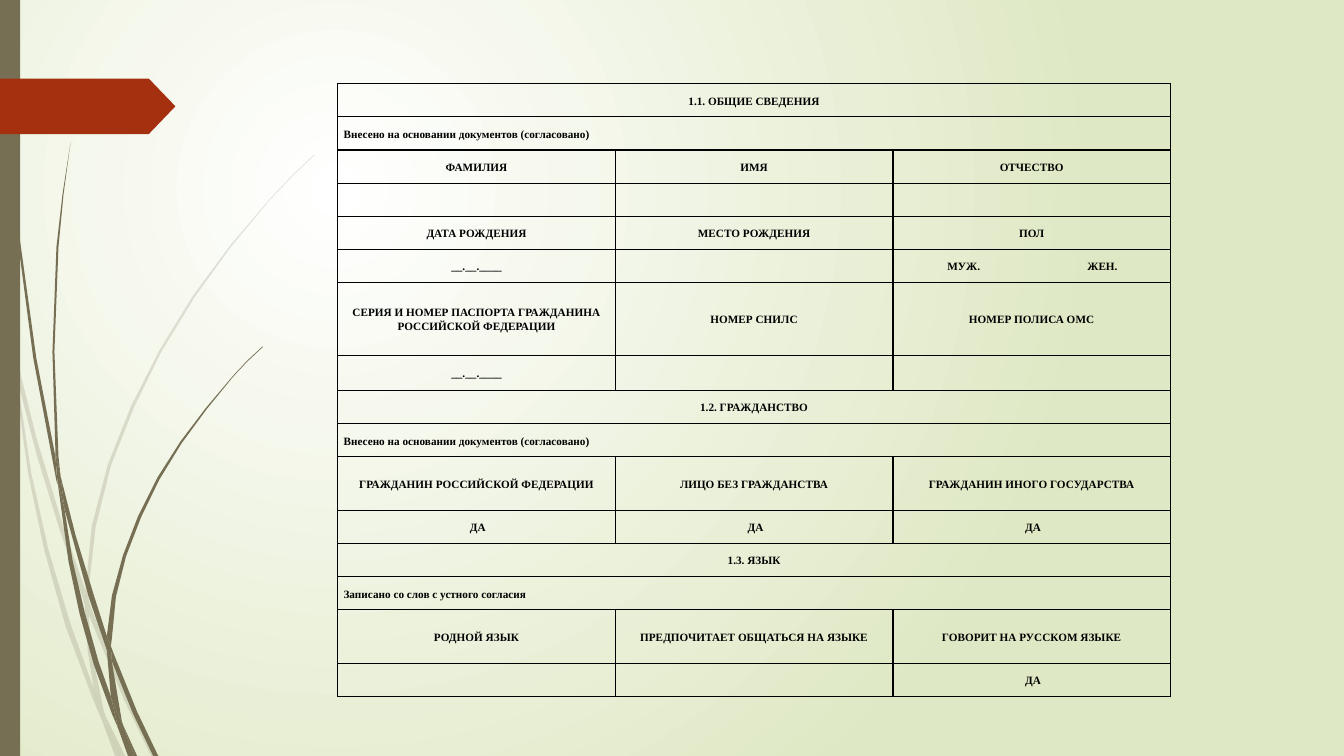
import pptx
import pptx.util
import pptx.dml.color
import pptx.enum.shapes
import pptx.enum.text
import pptx.oxml
import pptx.oxml.ns
import lxml.etree

COLORS = {"stem": "766F54", "arrow": "A53010", "ink": "000000",
          "glow": "FFFFFF", "edge": "DFE8C4"}
FONT, SIZE = "Times New Roman", 8
W, H = 13.33, 7.5
inch = pptx.util.Inches
qn = pptx.oxml.ns.qn

prs = pptx.Presentation()
prs.slide_width, prs.slide_height = inch(W), inch(H)
slide = prs.slides.add_slide(prs.slide_layouts[6])

fill = slide.background.fill
fill.gradient()
for stop, name in zip(fill.gradient_stops, ("glow", "edge")):
    stop.color.rgb = pptx.dml.color.RGBColor.from_string(COLORS[name])
    stop.position = 0 if name == "glow" else 1
grad = fill._fill._gradFill
for lin in grad.findall(qn("a:lin")):
    grad.remove(lin)
circle = lxml.etree.SubElement(grad, qn("a:path"), path="circle")
lxml.etree.SubElement(circle, qn("a:fillToRect"),
                      l="50000", t="50000", r="100000", b="100000")


def paint(sp, name):
    sp.shadow.inherit = False
    sp.fill.solid()
    sp.fill.fore_color.rgb = pptx.dml.color.RGBColor.from_string(COLORS[name])
    sp.line.fill.background()


pale_leaves = [
    [(.11, 3.5), (.09, 3.22), (0, 2.82), (0, 2.99), (.1, 3.44)],
    [(.58, 5.22), (.84, 5.99), (.85, 5.86), (.62, 5.2), (.36, 4.34), (.14, 3.45), (.17, 3.76), (.36, 4.5)],
    [(.92, 6.07), (.88, 5.96), (.88, 6.1), (1.23, 6.94), (1.5, H), (1.55, H), (1.27, 6.92)],
    [(1.19, H), (1.24, H), (1.05, 7.11)],
    [(.93, 6.83), (.7, 6.19), (.48, 5.45), (.31, 4.69), (.17, 3.76), (.11, 3.5), (.28, 4.7),
     (.44, 5.46), (.65, 6.21), (.92, 6.93), (1.01, 7.14), (.99, 7.07)],
    [(.84, 5.99), (.87, 6.46), (.93, 6.83), (.96, 6.92), (1.05, 7.11), (1.03, 7.06),
     (.91, 6.46), (.88, 6.1), (.88, 6.08)],
    [(.88, 5.84), (.95, 5.22), (1.1, 4.62), (1.33, 4.04), (1.6, 3.49), (1.93, 2.95), (2.29, 2.45),
     (2.68, 1.98), (2.9, 1.75), (3.12, 1.54), (3.12, 1.53), (2.89, 1.75), (2.68, 1.97), (2.28, 2.44),
     (1.91, 2.94), (1.58, 3.48), (1.3, 4.03), (1.07, 4.61), (.91, 5.22), (.85, 5.84), (.85, 5.86), (.88, 5.96)],
    [(1.01, 7.14), (1.14, H), (1.19, H)],
    [(.88, 6.08), (.88, 6.1), (.88, 5.96), (.85, 5.86), (.84, 5.99)],
    [(.96, 6.92), (.93, 6.83), (.99, 7.07), (1.01, 7.14), (1.19, H), (1.05, 7.11)],
]
dark_leaves = [
    [(.07, 1.1), (.17, 2.33), (.33, 3.55), (.56, 4.77), (.57, 4.81), (.55, 4.53), (.36, 3.55),
     (.19, 2.32), (.08, 1.09), (.05, .48), (.04, 0), (.03, 0), (.04, .48)],
    [(.88, 5.92), (1.06, 6.45), (1.06, 6.31), (.93, 5.9), (.75, 5.31), (.6, 4.72), (.64, 5.05)],
    [(1.13, 6.49), (1.1, 6.41), (1.11, 6.56), (1.32, 7.08), (1.52, H), (1.57, H), (1.36, 7.06)],
    [(1.1, 6.91), (.98, 6.57), (.84, 6.07), (.72, 5.56), (.64, 5.05), (.57, 4.77), (.68, 5.57),
     (.79, 6.09), (.93, 6.59), (1.11, 7.08), (1.17, 7.22), (1.16, 7.17)],
    [(.6, 4.72), (.58, 4.53), (.54, 3.49), (.58, 2.45), (.63, 1.93), (.7, 1.41),
     (.62, 1.93), (.56, 2.45), (.52, 3.49), (.55, 4.49)],
    [(1.33, H), (1.36, H), (1.22, 7.19)],
    [(.57, 4.77), (.64, 5.05), (.6, 4.72), (.55, 4.49), (.55, 4.53)],
    [(1.11, 6.33), (1.15, 5.92), (1.25, 5.52), (1.4, 5.13), (1.58, 4.76), (1.8, 4.4), (2.05, 4.06),
     (2.31, 3.74), (2.45, 3.59), (2.61, 3.44), (2.6, 3.44), (2.45, 3.58), (2.31, 3.73), (2.04, 4.05),
     (1.79, 4.38), (1.56, 4.74), (1.37, 5.12), (1.22, 5.51), (1.11, 5.91), (1.06, 6.31), (1.1, 6.41)],
    [(1.17, 7.22), (1.27, H), (1.31, H)],
    [(1.06, 6.45), (1.1, 6.91), (1.16, 7.06), (1.22, 7.19), (1.21, 7.16), (1.11, 6.56), (1.09, 6.51)],
    [(1.06, 6.45), (1.09, 6.51), (1.11, 6.56), (1.1, 6.41), (1.06, 6.31)],
    [(1.16, 7.06), (1.1, 6.91), (1.16, 7.17), (1.17, 7.22), (1.3, H), (1.33, H), (1.22, 7.19)],
]
for leaves, opacity in ((pale_leaves, 20), (dark_leaves, 100)):
    for leaf in leaves:
        pts = [(inch(x), inch(y)) for x, y in leaf]
        fb = slide.shapes.build_freeform(*pts[0])
        fb.add_line_segments(pts[1:], close=True)
        sp = fb.convert_to_shape()
        paint(sp, "stem")
        if opacity < 100:
            color = sp.fill._xPr.find(".//" + qn("a:srgbClr"))
            lxml.etree.SubElement(color, qn("a:alpha"), val=str(opacity * 1000))

kinds = pptx.enum.shapes.MSO_SHAPE
bar = slide.shapes.add_shape(kinds.RECTANGLE, 0, 0, inch(W * .015), inch(H))
paint(bar, "stem")
arrow = slide.shapes.add_shape(kinds.PENTAGON, 0, inch(.78), inch(1.74), inch(.55))
arrow.adjustments[0] = .48
paint(arrow, "arrow")

DOCS = " Внесено на основании документов (согласовано)"
DATE, YES = "__.__.____", " ДА"
rows = [
    ["1.1. ОБЩИЕ СВЕДЕНИЯ"],
    [DOCS],
    ["ФАМИЛИЯ", "ИМЯ", "ОТЧЕСТВО"],
    ["", "", ""],
    ["ДАТА РОЖДЕНИЯ", "МЕСТО РОЖДЕНИЯ", "ПОЛ"],
    [DATE, "", " МУЖ.", " ЖЕН."],
    ["СЕРИЯ И НОМЕР ПАСПОРТА ГРАЖДАНИНА РОССИЙСКОЙ ФЕДЕРАЦИИ", "НОМЕР СНИЛС", "НОМЕР ПОЛИСА ОМС"],
    [DATE, "", ""],
    ["1.2. ГРАЖДАНСТВО"],
    [DOCS],
    ["ГРАЖДАНИН РОССИЙСКОЙ ФЕДЕРАЦИИ", "ЛИЦО БЕЗ ГРАЖДАНСТВА", "ГРАЖДАНИН ИНОГО ГОСУДАРСТВА"],
    [YES, YES, YES],
    ["1.3. ЯЗЫК"],
    [" Записано со слов с устного согласия"],
    ["РОДНОЙ ЯЗЫК", "ПРЕДПОЧИТАЕТ ОБЩАТЬСЯ НА ЯЗЫКЕ", "ГОВОРИТ НА РУССКОМ ЯЗЫКЕ"],
    ["", "", YES],
]
TABLE_W, TABLE_H = 8.26, 6.08
COL = TABLE_W / 3
col_widths = [COL, COL, COL / 2, COL / 2]
tall_rows = {6: .72, 7: .35, 10: .53, 14: .53}
ROW = (TABLE_H - sum(tall_rows.values())) / (len(rows) - len(tall_rows))

frame = slide.shapes.add_table(len(rows), 4, inch(3.35), inch(.83), inch(TABLE_W), inch(TABLE_H))
table = frame.table
table.first_row = table.horz_banding = False
for column, width in zip(table.columns, col_widths):
    column.width = inch(width)
for i, row in enumerate(table.rows):
    row.height = inch(tall_rows.get(i, ROW))

align = pptx.enum.text.PP_ALIGN
for i, texts in enumerate(rows):
    if len(texts) < 4:
        table.cell(i, len(texts) - 1).merge(table.cell(i, 3))
    for j in range(4):
        cell = table.cell(i, j)
        cell.margin_left = cell.margin_right = inch(.03)
        cell.margin_top = cell.margin_bottom = inch(.05)
        cell.vertical_anchor = pptx.enum.text.MSO_ANCHOR.MIDDLE
        tcPr = cell._tc.get_or_add_tcPr()
        for side in ("lnL", "lnR", "lnT", "lnB"):
            ln = lxml.etree.SubElement(tcPr, qn("a:" + side), w="12700")
            if len(texts) == 4 and (j, side) in ((2, "lnR"), (3, "lnL")):
                lxml.etree.SubElement(ln, qn("a:noFill"))
            else:
                solid = lxml.etree.SubElement(ln, qn("a:solidFill"))
                lxml.etree.SubElement(solid, qn("a:srgbClr"), val=COLORS["ink"])
        cell.fill.background()
        p = cell.text_frame.paragraphs[0]
        text = texts[j] if j < len(texts) else ""
        if not text:
            p._p.get_or_add_endParaRPr().set("sz", str(SIZE * 100))
            continue
        p.line_spacing = 1.15
        p.alignment = align.LEFT if i in (1, 9, 13) else align.CENTER
        r = p.add_run()
        r.text = text
        r.font.name, r.font.size, r.font.bold = FONT, pptx.util.Pt(SIZE), True
        r.font.color.rgb = pptx.dml.color.RGBColor.from_string(COLORS["ink"])

prs.save("out.pptx")
